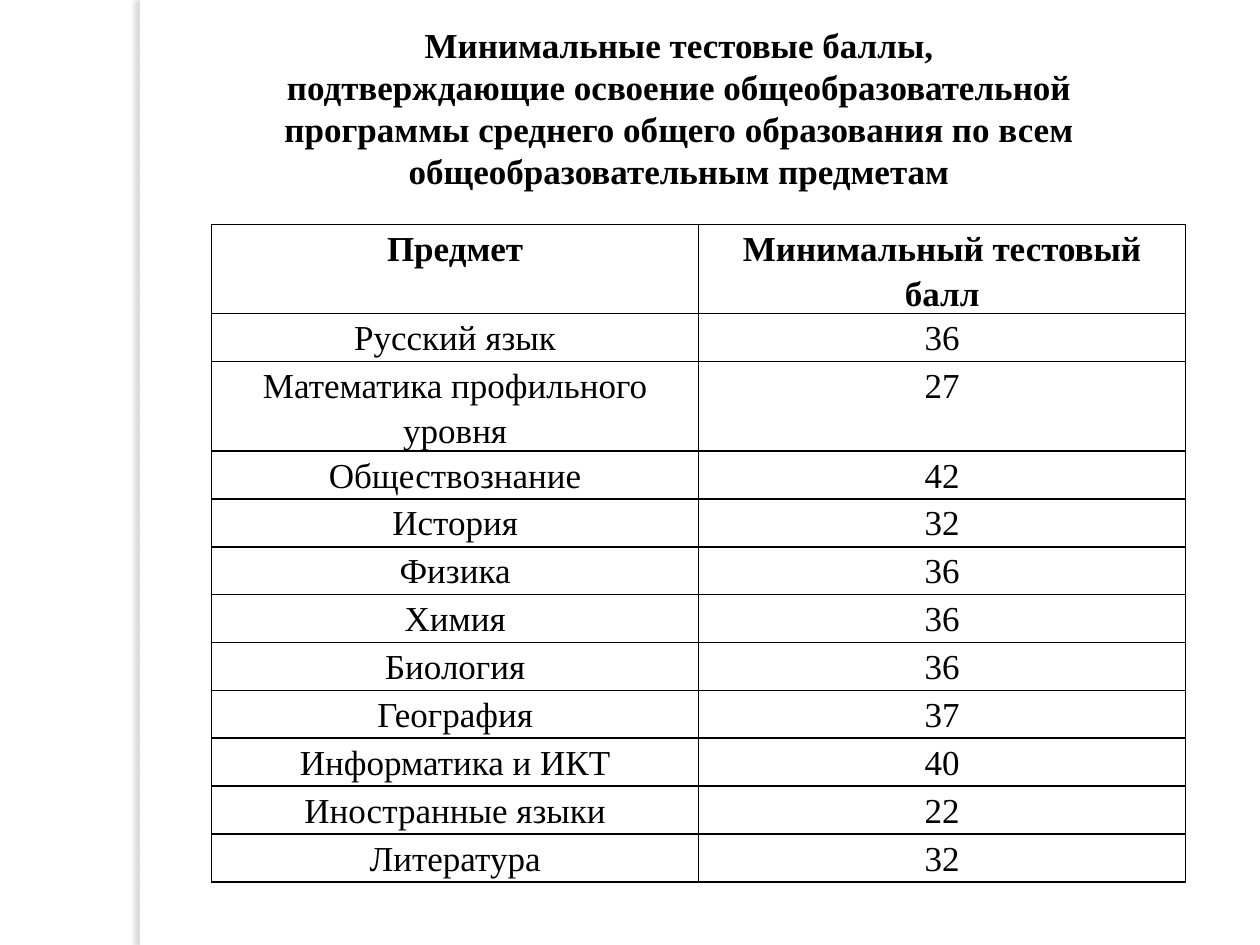
from lxml import etree
from pptx import Presentation
from pptx import util as u
from pptx.dml.color import RGBColor
from pptx.enum import shapes, text
from pptx.oxml.ns import qn

FONT = "Times New Roman"
COLORS = {"text": "000000", "border": "000000", "paper": "FFFFFF", "shadow": "736F63"}
TITLE = [
    "Минимальные тестовые баллы,",
    "подтверждающие освоение общеобразовательной программы среднего "
    "общего образования по всем общеобразовательным предметам",
]
HEADER = ("Предмет", "Минимальный тестовый балл")
SCORES = [
    ("Русский язык", 36),
    ("Математика профильного уровня", 27),
    ("Обществознание", 42),
    ("История", 32),
    ("Физика", 36),
    ("Химия", 36),
    ("Биология", 36),
    ("География", 37),
    ("Информатика и ИКТ", 40),
    ("Иностранные языки", 22),
    ("Литература", 32),
]
ROW_HEIGHT, TALL_ROW_HEIGHT = 0.38, 0.71
TALL_ROWS = (0, 2)  # rows whose text takes two lines


def color(name):
    return RGBColor.from_string(COLORS[name])


def add_color(parent, name):
    fill = etree.SubElement(parent, qn("a:solidFill"))
    return etree.SubElement(fill, qn("a:srgbClr"), val=COLORS[name])


def format_paragraph(paragraph, bold, line_spacing=None):
    paragraph.alignment = text.PP_ALIGN.CENTER
    paragraph.line_spacing = line_spacing
    for run in paragraph.runs:
        run.font.name = FONT
        run.font.size = u.Pt(20)
        run.font.bold = bold
        run.font.color.rgb = color("text")


def add_side_strip(slide, left, top, width, height):
    strip = slide.shapes.add_shape(shapes.MSO_SHAPE.RECTANGLE, left, top, width, height)
    strip.fill.solid()
    strip.fill.fore_color.rgb = color("paper")
    strip.line.fill.background()
    strip.shadow.inherit = False
    # Soft shadow falling to the left
    effects = strip._element.spPr.find(qn("a:effectLst"))
    shadow = etree.SubElement(
        effects, qn("a:outerShdw"), blurRad=str(u.Pt(3)), dist=str(u.Pt(3)),
        dir=str(180 * 60000), algn="tl", rotWithShape="0")
    shadow_color = etree.SubElement(shadow, qn("a:srgbClr"), val=COLORS["shadow"])
    etree.SubElement(shadow_color, qn("a:alpha"), val="25000")


def add_title(slide, left, top, width, height):
    frame = slide.shapes.add_textbox(left, top, width, height).text_frame
    frame.word_wrap = True
    frame.vertical_anchor = text.MSO_ANCHOR.TOP
    frame.text = "\n".join(TITLE)
    for paragraph in frame.paragraphs:
        format_paragraph(paragraph, bold=True)


def set_borders(cell):
    properties = cell._tc.get_or_add_tcPr()
    for index, side in enumerate(("a:lnL", "a:lnR", "a:lnT", "a:lnB")):
        line = etree.Element(qn(side), w=str(u.Pt(1)))
        add_color(line, "border")
        properties.insert(index, line)


def add_score_table(slide, left, top, width):
    rows = [HEADER, *SCORES]
    heights = [TALL_ROW_HEIGHT if index in TALL_ROWS else ROW_HEIGHT
               for index in range(len(rows))]
    table = slide.shapes.add_table(
        len(rows), len(HEADER), left, top, width, u.Inches(sum(heights))).table
    table.first_row = table.horz_banding = False
    for row_index, values in enumerate(rows):
        table.rows[row_index].height = u.Inches(heights[row_index])
        for column_index, value in enumerate(values):
            cell = table.cell(row_index, column_index)
            cell.margin_left = cell.margin_right = u.Inches(0.07)
            cell.margin_top = cell.margin_bottom = 0
            cell.fill.background()
            set_borders(cell)
            cell.text_frame.text = str(value)
            format_paragraph(cell.text_frame.paragraphs[0],
                             bold=row_index == 0, line_spacing=1.15)


def main():
    presentation = Presentation()
    presentation.slide_width = u.Inches(10)
    presentation.slide_height = u.Inches(7.5)
    slide = presentation.slides.add_slide(presentation.slide_layouts[6])
    slide.background.fill.solid()
    slide.background.fill.fore_color.rgb = color("paper")

    add_side_strip(slide, u.Inches(1.11), 0, u.Inches(0.08), presentation.slide_height)
    add_score_table(slide, u.Inches(1.68), u.Inches(1.78), u.Inches(7.73))
    add_title(slide, u.Inches(1.61), u.Inches(0.14), u.Inches(7.56), u.Inches(1.75))
    presentation.save("out.pptx")


if __name__ == "__main__":
    main()
